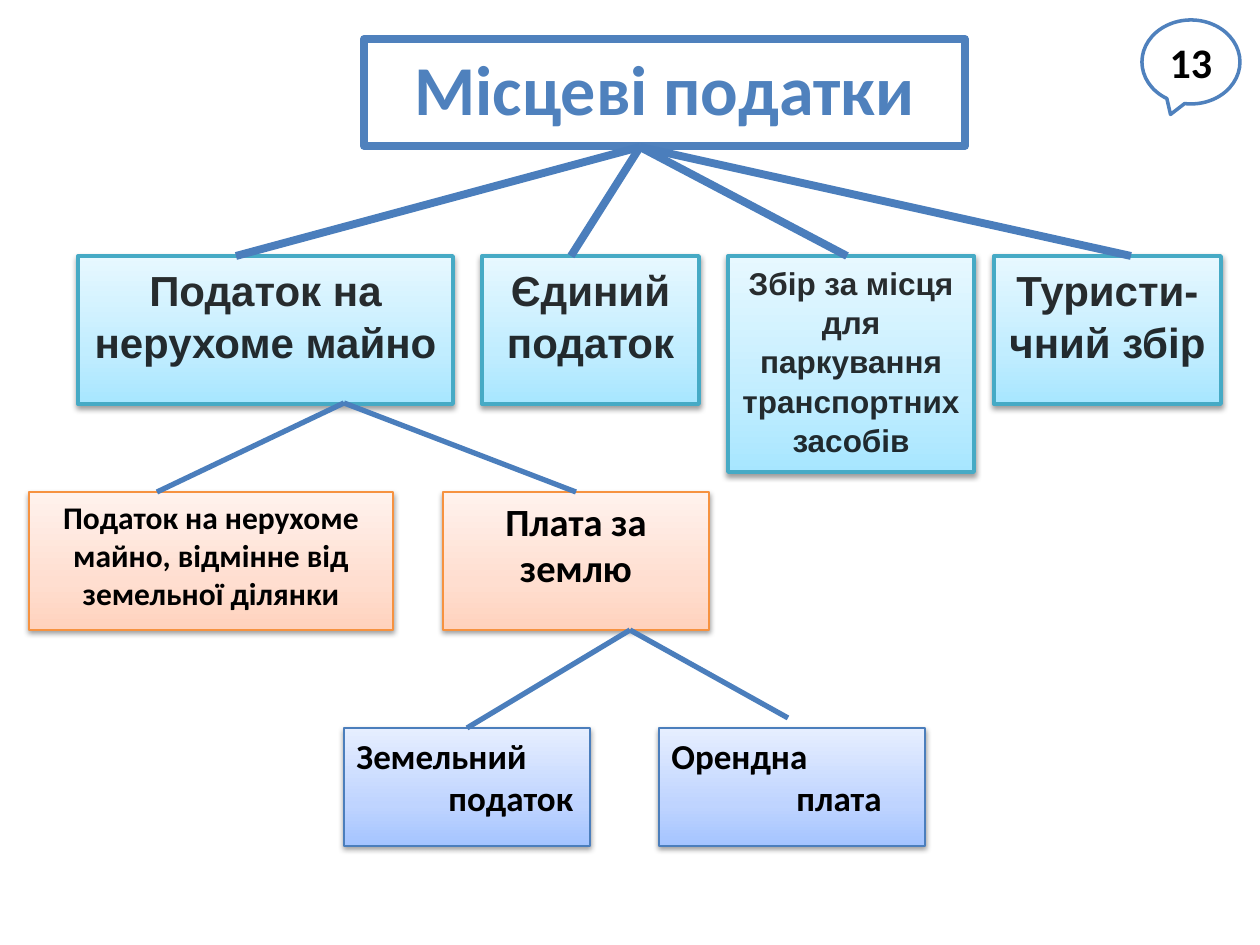
"""Builds a slide with a tree of local taxes."""
from copy import deepcopy

from lxml import etree
from pptx import Presentation
from pptx import util as u
from pptx.dml.color import RGBColor
from pptx.enum import shapes, text
from pptx.oxml.ns import qn

TITLE = ("Місцеві податки", (364, 39, 601, 107))
NUMBER = ("13", (1142, 20, 98, 84))
TIERS = [
    {"style": "tax", "top": 256, "boxes": [
        ("Податок на нерухоме майно", 78, 375, 148, 24),
        ("Єдиний податок", 482, 217, 148, 24),
        ("Збір за місця для паркування транспортних засобів", 728, 246, 216, 18),
        ("Туристи-чний збір", 994, 227, 148, 24)]},
    {"style": "property", "top": 492, "boxes": [
        ("Податок на нерухоме майно, відмінне від земельної ділянки", 29, 364, 138, 18),
        ("Плата за землю", 443, 266, 138, 22)]},
    {"style": "land", "top": 728, "boxes": [
        ("Земельний\nподаток", 344, 246, 118, 20),
        ("Орендна\nплата", 659, 266, 118, 20)]},
]
INDENTS = {"Земельний\nподаток": 92, "Орендна\nплата": 125}
BRANCHES = [
    ((640, 147), 4.5, [(236, 256), (571, 256), (847, 256), (1131, 256)]),
    ((344, 403), 3, [(157, 492), (576, 492)]),
    ((630, 630), 3, [(467, 728), (788, 718)]),
]
THEME = {
    "paper": "FFFFFF", "ink": "000000", "accent": "4F81BD", "branch": "4B7EBC",
    "title_size": 40, "number_size": 24, "stops": (0, 0.35, 1),
    "tax": {"fill": ("A7E6FF", "C1EDFF", "E7F8FF"), "line": ("46AAC5", 2.25),
            "text": {"font": "Arial", "alpha": 81, "spacing": 1.04}},
    "property": {"fill": ("FFD2BD", "FFDED0", "FFF2ED"), "line": ("F69240", 0.75),
                 "text": {}},
    "land": {"fill": ("A4C4FF", "BFD4FF", "E6EEFF"), "line": ("4B7EBC", 0.75),
             "text": {}},
}


def px(n):
    return int(n * 914400 / 126)


def rgb(name):
    return RGBColor.from_string(THEME.get(name, name))


def write(s, content, size, font="Calibri", color="ink", alpha=None, spacing=None,
          indent=None, after=10, anchor=text.MSO_ANCHOR.TOP):
    tf = s.text_frame
    tf.word_wrap = True
    tf.auto_size = text.MSO_AUTO_SIZE.NONE
    tf.vertical_anchor = anchor
    lines = content.split("\n")
    for i, line in enumerate(lines):
        p = tf.paragraphs[0] if i == 0 else tf.add_paragraph()
        p.alignment = text.PP_ALIGN.CENTER if indent is None else text.PP_ALIGN.LEFT
        p.space_after = u.Pt(after if i == len(lines) - 1 else 0)
        if spacing:
            p.line_spacing = spacing
        if indent and i:
            p._p.get_or_add_pPr().set("marL", str(px(indent)))
        r = p.add_run()
        r.text = line
        r.font.name, r.font.size, r.font.bold = font, u.Pt(size), True
        r.font.color.rgb = rgb(color)
        if alpha:
            clr = r._r.rPr.find(".//" + qn("a:srgbClr"))
            etree.SubElement(clr, qn("a:alpha"), val=str(alpha * 1000))


def outline(s, color, width):
    s.line.color.rgb = rgb(color)
    s.line.width = u.Pt(width)


def fill_gradient(s, colors):
    s.fill.gradient()
    s.fill.gradient_angle = 90
    stops = s._element.spPr.find(".//" + qn("a:gsLst"))
    stops.append(deepcopy(stops[0]))
    for stop, pos, color in zip(s.fill.gradient_stops, THEME["stops"], colors):
        stop.position = pos
        stop.color.rgb = rgb(color)


def add_shadow(s):
    s.shadow.inherit = False
    effects = s._element.spPr.find(qn("a:effectLst"))
    shadow = etree.SubElement(effects, qn("a:outerShdw"), blurRad="40000",
                              dist="20000", dir="5400000", rotWithShape="0")
    clr = etree.SubElement(shadow, qn("a:srgbClr"), val=THEME["ink"])
    etree.SubElement(clr, qn("a:alpha"), val="38000")


def add_title(slide):
    content, place = TITLE
    s = slide.shapes.title
    s.left, s.top, s.width, s.height = map(px, place)
    s.fill.solid()
    s.fill.fore_color.rgb = rgb("paper")
    outline(s, "accent", 4.5)
    write(s, content, THEME["title_size"], color="accent")


def add_box(slide, style, top, box):
    content, left, width, height, size = box
    s = slide.shapes.add_shape(shapes.MSO_SHAPE.RECTANGLE,
                               *map(px, (left, top, width, height)))
    fill_gradient(s, style["fill"])
    outline(s, *style["line"])
    add_shadow(s)
    write(s, content, size, indent=INDENTS.get(content), **style["text"])


def add_branch(slide, start, end, width):
    s = slide.shapes.add_connector(shapes.MSO_CONNECTOR.STRAIGHT,
                                   *map(px, start + end))
    outline(s, "branch", width)
    etree.SubElement(s._element.spPr, qn("a:effectLst"))


def add_number(slide):
    content, place = NUMBER
    s = slide.shapes.add_shape(shapes.MSO_SHAPE.OVAL_CALLOUT, *map(px, place))
    s.shadow.inherit = False
    s.fill.solid()
    s.fill.fore_color.rgb = rgb("paper")
    outline(s, "accent", 2)
    tf = s.text_frame
    tf.margin_left = tf.margin_right = 0
    write(s, content, THEME["number_size"], after=0, anchor=text.MSO_ANCHOR.MIDDLE)


def main():
    prs = Presentation()
    prs.slide_width, prs.slide_height = u.Inches(10), u.Inches(7.5)
    slide = prs.slides.add_slide(prs.slide_layouts[5])
    add_title(slide)
    for tier in TIERS:
        for box in tier["boxes"]:
            add_box(slide, THEME[tier["style"]], tier["top"], box)
    for start, width, ends in BRANCHES:
        for end in ends:
            add_branch(slide, start, end, width)
    add_number(slide)
    prs.save("out.pptx")


if __name__ == "__main__":
    main()
